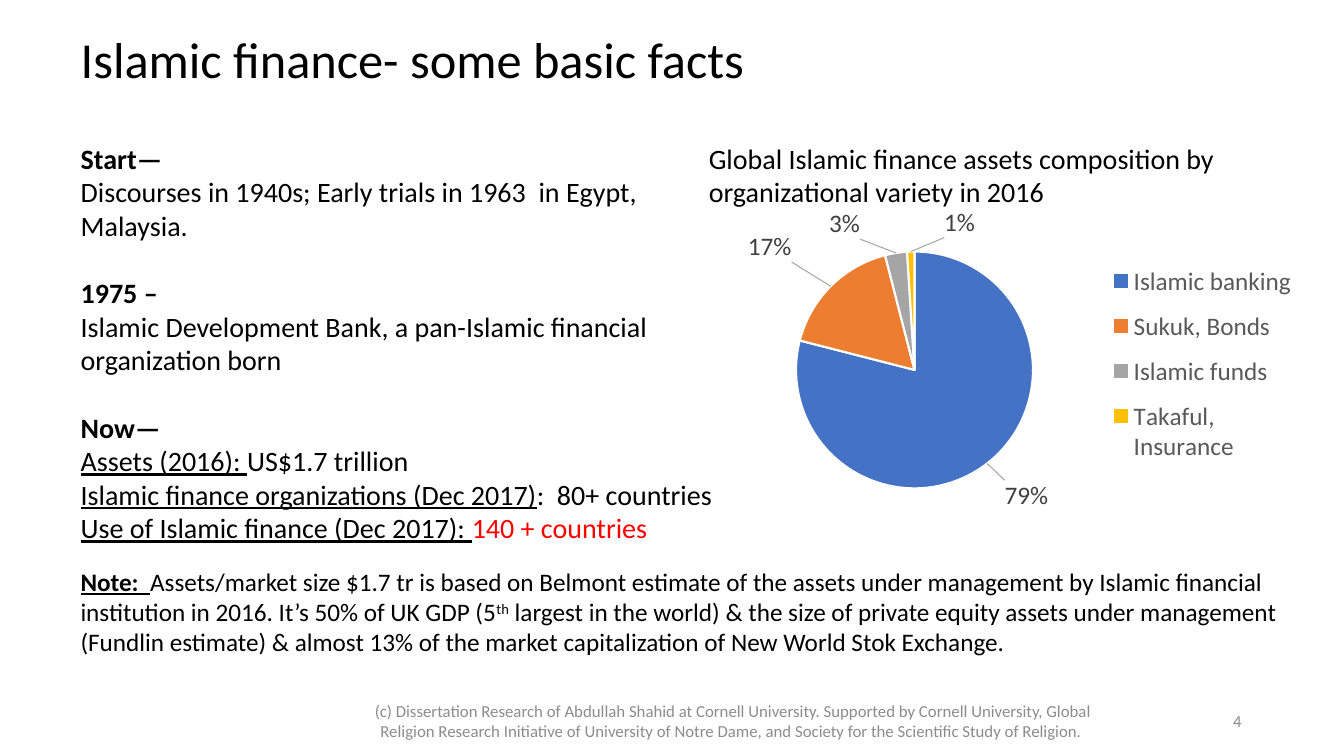
from lxml.etree import SubElement
from pptx import Presentation
from pptx.chart.data import CategoryChartData
from pptx.dml.color import RGBColor
from pptx.enum.chart import XL_CHART_TYPE, XL_LABEL_POSITION, XL_LEGEND_POSITION
from pptx.enum.text import MSO_ANCHOR, MSO_AUTO_SIZE, PP_ALIGN
from pptx.oxml.ns import qn
from pptx.util import Inches, Pt

COLORS = {
    "text": "000000", "paper": "FFFFFF", "alert": "FF0000", "footer": "8C8C8C",
    "label": "404040", "legend": "595959", "leader": "A6A6A6",
    "banking": "4472C4", "sukuk": "ED7D31", "funds": "A5A5A5", "takaful": "FFC000",
}
BOLD = {"bold": True}
UNDER = {"underline": True}
FACTS = [
    [("Start—", BOLD)],
    [("Discourses in 1940s; Early trials in 1963  in Egypt, Malaysia.", {})],
    [("1975 –", BOLD)],
    [("Islamic Development Bank, a pan-Islamic financial organization born", {})],
    [("Now—", BOLD)],
    [("Assets (2016): ", UNDER), ("US$1.7 trillion", {})],
    [("Islamic finance organizations (Dec 2017)", UNDER), (":  80+ countries", {})],
    [("Use of Islamic finance (Dec 2017): ", UNDER), ("140 + countries", {"color": "alert"})],
]
NOTE = [
    ("Note:  ", {**BOLD, **UNDER}),
    ("Assets/market size $1.7 tr is based on Belmont estimate of the assets under management "
     "by Islamic financial institution in 2016. It’s 50% of UK GDP (5", {}),
    ("th", {"baseline": "30000"}),
    (" largest in the world) & the size of private equity assets under management "
     "(Fundlin estimate) & almost 13% of the market capitalization of New World Stok Exchange.", {}),
]
FOOTER = ("(c) Dissertation Research of Abdullah Shahid at Cornell University. Supported by "
          "Cornell University, Global Religion Research Initiative of University of Notre Dame, "
          "and Society for the Scientific Study of Religion. ")
ASSETS = [
    ("Islamic banking", 0.79, "banking", (0.02, 0.03)),
    ("Sukuk, Bonds", 0.17, "sukuk", (-0.05, -0.05)),
    ("Islamic funds", 0.03, "funds", (-0.05, -0.02)),
    ("Takaful, Insurance", 0.01, "takaful", (0.07, -0.02)),
]


def assign(target, values):
    for name, value in values.items():
        setattr(target, name, value)


def rgb(name):
    return RGBColor.from_string(COLORS[name])


class Deck:
    font = "Calibri"
    cols, rows = 160, 90

    def __init__(self):
        self.prs = Presentation()
        assign(self.prs, {"slide_width": Inches(13.33), "slide_height": Inches(7.5)})
        self.s = self.prs.slides.add_slide(self.prs.slide_layouts[1])

    def box(self, col, row, width, height):
        cell_w, cell_h = self.prs.slide_width / self.cols, self.prs.slide_height / self.rows
        return [int(n) for n in (col * cell_w, row * cell_h, width * cell_w, height * cell_h)]

    def style(self, font, size, color, **values):
        assign(font, {"name": self.font, "size": Pt(size), **values})
        font.color.rgb = rgb(color)

    def add_runs(self, sp, paragraphs, size, color="text", anchor=MSO_ANCHOR.TOP, **formats):
        tf = sp.text_frame
        assign(tf, {"word_wrap": True, "auto_size": MSO_AUTO_SIZE.NONE, "vertical_anchor": anchor})
        for i, runs in enumerate(paragraphs):
            p = tf.add_paragraph() if i else tf.paragraphs[0]
            assign(p, {"alignment": PP_ALIGN.LEFT, "space_before": Pt(0), **formats})
            for text, values in runs:
                values = {"color": color, **values}
                baseline = values.pop("baseline", None)
                r = p.add_run()
                r.text = text
                self.style(r.font, size, **values)
                if baseline:
                    r._r.get_or_add_rPr().set("baseline", baseline)

    def place(self, sp, place):
        assign(sp, dict(zip(("left", "top", "width", "height"), self.box(*place))))

    def title(self, place, text):
        sp = self.s.shapes.title
        self.place(sp, place)
        self.add_runs(sp, [[(text, {})]], 36, anchor=MSO_ANCHOR.MIDDLE, line_spacing=0.9)

    def body(self, place, paragraphs, size):
        sp = self.s.placeholders[1]
        self.place(sp, place)
        sp.fill.solid()
        sp.fill.fore_color.rgb = rgb("paper")
        self.add_runs(sp, paragraphs, size)
        for i, p in enumerate(sp.text_frame.paragraphs):
            pPr = p._p.get_or_add_pPr()
            pPr.set("marL", "0")
            pPr.set("indent", "0")
            SubElement(pPr, qn("a:buNone"))
            if i and paragraphs[i][0][1] == BOLD:
                p.space_before = Pt(size * 1.2)

    def text(self, place, runs, size, **formats):
        sp = self.s.shapes.add_textbox(*self.box(*place))
        self.add_runs(sp, [runs], size, **formats)

    def layout(self, parent, index, **values):
        for old in parent.findall(qn("c:layout")):
            parent.remove(old)
        layout = SubElement(parent, qn("c:layout"))
        parent.insert(index, layout)
        manual = SubElement(layout, qn("c:manualLayout"))
        for name, value in values.items():
            SubElement(manual, qn(f"c:{name}")).set("val", str(value))

    def pie(self, place, assets):
        data = CategoryChartData(number_format="0%")
        data.categories = [name for name, *_ in assets]
        data.add_series("Series 1", [value for _, value, *_ in assets])
        chart = self.s.shapes.add_chart(XL_CHART_TYPE.PIE, *self.box(*place), data).chart
        assign(chart, {"has_title": False, "has_legend": True})
        self.style(chart.font, 18, "text")
        assign(chart.legend, {"position": XL_LEGEND_POSITION.BOTTOM, "include_in_layout": False})
        self.style(chart.legend.font, 18, "legend")
        self.layout(chart.legend._element, 1, xMode="edge", yMode="edge",
                    x=0.72, y=0.25, w=0.28, h=0.56)
        self.layout(chart._chartSpace.chart.plotArea, 0, layoutTarget="inner",
                    xMode="edge", yMode="edge", x=0, y=0.25, w=0.9, h=0.59)
        plot = chart.plots[0]
        plot.vary_by_categories = True
        ser = plot.series[0]
        labels = ser.data_labels
        assign(labels, {"show_value": True, "number_format": "0%",
                        "number_format_is_linked": False,
                        "position": XL_LABEL_POSITION.BEST_FIT})
        self.style(labels.font, 18, "label")
        for i, (_, _, color, (dx, dy)) in enumerate(assets):
            point = ser.points[i]
            point.format.fill.solid()
            point.format.fill.fore_color.rgb = rgb(color)
            point.format.line.width = Pt(1.5)
            point.format.line.color.rgb = rgb("paper")
            point.data_label.position = XL_LABEL_POSITION.BEST_FIT
            self.style(point.data_label.font, 18, "label")
            self.layout(labels._element.findall(qn("c:dLbl"))[i], 1, x=dx, y=dy)
        for old in labels._element.findall(qn("c:showLeaderLines")):
            labels._element.remove(old)
        SubElement(labels._element, qn("c:showLeaderLines")).set("val", "1")
        leader = SubElement(SubElement(labels._element, qn("c:leaderLines")), qn("c:spPr"))
        fill = SubElement(SubElement(leader, qn("a:ln"), w="9525"), qn("a:solidFill"))
        SubElement(fill, qn("a:srgbClr"), val=COLORS["leader"])


def main():
    deck = Deck()
    deck.title((8.4, 2.5, 138, 9.7), "Islamic finance- some basic facts")
    deck.body((8.4, 16.2, 77.6, 49.7), FACTS, 20)
    deck.pie((71.3, 18, 83.5, 47.8), ASSETS)
    deck.text((83.2, 16.2, 74.6, 9.2), [(
        "Global Islamic finance assets composition by organizational variety in 2016", {})], 20)
    deck.text((8.4, 65.9, 149.4, 13.8), NOTE, 18, anchor=MSO_ANCHOR.MIDDLE)
    small = {"size": 12, "color": "footer", "anchor": MSO_ANCHOR.MIDDLE}
    deck.text((113, 83.4, 36, 4.8), [("4", {})], alignment=PP_ALIGN.RIGHT, **small)
    deck.text((40.1, 83.4, 94.4, 4.8), [(FOOTER, {})], alignment=PP_ALIGN.CENTER, **small)
    deck.prs.save("out.pptx")


if __name__ == "__main__":
    main()
